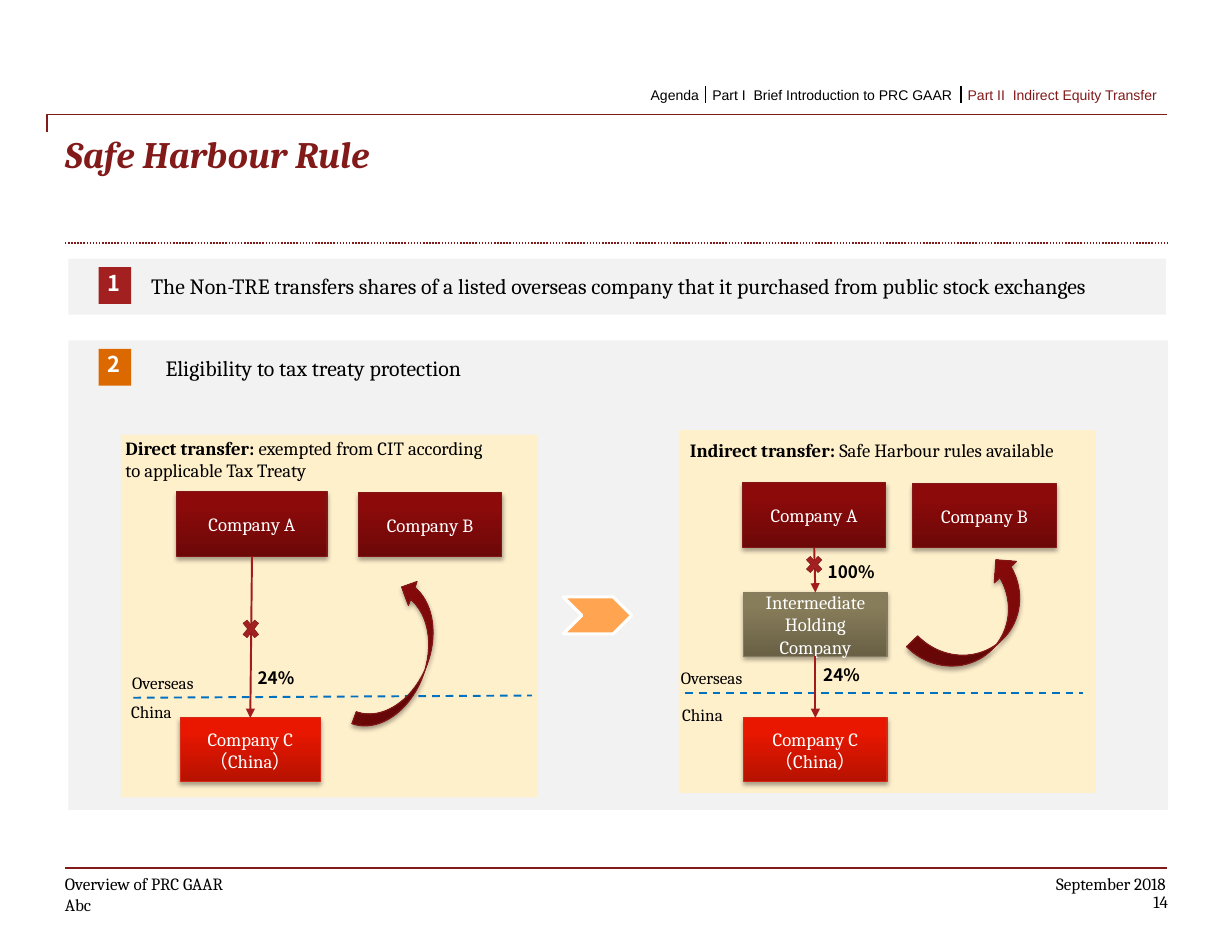
from lxml.etree import SubElement
from pptx import Presentation
from pptx.dml.color import RGBColor
from pptx.enum.dml import MSO_LINE
from pptx.enum.shapes import MSO_CONNECTOR, MSO_SHAPE
from pptx.enum.text import MSO_ANCHOR, MSO_AUTO_SIZE, PP_ALIGN
from pptx.oxml.ns import qn
from pptx.util import Inches, Pt

COLUMNS, ROWS = 110, 85
CELL = Inches(0.1)
COLORS = {
    "black": "000000", "white": "FFFFFF", "maroon": "821A1A", "panel": "F2F2F2",
    "cream": "FFF0CC", "red": "A32020", "orange": "DC6900", "peach": "FFA451",
    "blue": "0070C0", "arrow": "A31C1C", "cross": "791818",
}
GRADIENTS = {
    "owner": ("6D0808", "8D0A0A", "821717"),
    "holding": ("696045", "887D5A", "857C5F"),
    "target": ("B51200", "EA1700", "D62917"),
}
FORMATS = {
    "title": {"name": "Cambria", "size": Pt(24), "bold": True, "italic": True},
    "heading": {"name": "Cambria", "size": Pt(14)},
    "lead": {"name": "Cambria", "size": Pt(12), "bold": True},
    "body": {"name": "Cambria", "size": Pt(12)},
    "small": {"name": "Cambria", "size": Pt(11)},
    "badge": {"name": "Noto Sans CJK SC", "size": Pt(14), "bold": True},
    "share": {"name": "Noto Sans CJK SC", "size": Pt(11), "bold": True},
    "navigation": {"name": "Arial", "size": Pt(9)},
}


def grid(*cells):
    """Convert grid cells to slide lengths."""
    return [round(cell * CELL) for cell in cells]


def rgb(name):
    """Look up a named colour, or accept a hex string."""
    return RGBColor.from_string(COLORS.get(name, name))


def set_attributes(target, values):
    """Set each attribute in a dict of format values."""
    for name, value in values.items():
        setattr(target, name, value)


def add_run(paragraph, text, style, color):
    """Append a formatted run to a paragraph."""
    run = paragraph.add_run()
    run.text = text
    set_attributes(run.font, FORMATS[style])
    run.font.color.rgb = rgb(color)


def add_text(shapes, box, runs, color="black", inset=(0, 0), wrap=True, **paragraph_format):
    """Add a text box holding one paragraph of (text, style) runs."""
    frame = shapes.add_textbox(*grid(*box)).text_frame
    side, top = grid(*inset)
    set_attributes(frame, {
        "margin_left": side, "margin_right": side, "margin_top": top, "margin_bottom": top,
        "word_wrap": wrap,
        "auto_size": MSO_AUTO_SIZE.NONE if wrap else MSO_AUTO_SIZE.SHAPE_TO_FIT_TEXT,
    })
    paragraph = frame.paragraphs[0]
    set_attributes(paragraph, paragraph_format)
    for text, style in runs:
        add_run(paragraph, text, style, color)


def add_block(shapes, kind, box, fill, line=None, width=1.0):
    """Add a flat preset shape."""
    shape = shapes.add_shape(kind, *grid(*box))
    shape.shadow.inherit = False
    shape.fill.solid()
    shape.fill.fore_color.rgb = rgb(fill)
    if line:
        shape.line.color.rgb = rgb(line)
        shape.line.width = Pt(width)
    else:
        shape.line.fill.background()
    return shape


def add_glossy(shapes, kind, box, gradient, rotation=0):
    """Add a preset shape with a vertical gradient and a soft shadow."""
    bottom, top, line = GRADIENTS[gradient]
    shape = add_block(shapes, kind, box, top, line, 0.75)
    shape.rotation = rotation
    shape.fill.gradient()
    shape.fill.gradient_angle = 90
    for stop, color, position in zip(shape.fill.gradient_stops, (bottom, top), (0, 0.8)):
        stop.color.rgb = rgb(color)
        stop.position = position
    effects = shape._element.spPr.find(qn("a:effectLst"))
    shadow = SubElement(effects, qn("a:outerShdw"), blurRad=str(Pt(3.1)), dist=str(Pt(1.8)),
                        dir="5400000", rotWithShape="0")
    color = SubElement(shadow, qn("a:srgbClr"), val=COLORS["black"])
    SubElement(color, qn("a:alpha"), val="35000")
    return shape


def add_company(shapes, box, gradient, *lines):
    """Add a company box with centred lines of text."""
    shape = add_glossy(shapes, MSO_SHAPE.RECTANGLE, box, gradient)
    frame = shape.text_frame
    set_attributes(frame, {"word_wrap": True, "vertical_anchor": MSO_ANCHOR.MIDDLE})
    for index, line in enumerate(lines):
        paragraph = frame.add_paragraph() if index else frame.paragraphs[0]
        paragraph.alignment = PP_ALIGN.CENTER
        add_run(paragraph, line, "body", "white")
    return shape


def add_line(shapes, ends, color, width, dash=None):
    """Add a straight line between two grid points."""
    line = shapes.add_connector(MSO_CONNECTOR.STRAIGHT, *grid(*ends))
    line.line.color.rgb = rgb(color)
    line.line.width = Pt(width)
    if dash:
        line.line.dash_style = dash
    SubElement(line._element.spPr, qn("a:effectLst"))
    return line


def add_ownership(shapes, parent, child):
    """Join a parent company to its subsidiary with an arrow."""
    line = add_line(shapes, (0, 0, 1, 1), "arrow", 1.25)
    line.begin_connect(parent, 2)
    line.end_connect(child, 0)
    SubElement(line.line._get_or_add_ln(), qn("a:tailEnd"), type="triangle")


def add_item(shapes, number, color, panel, text, text_left):
    """Add a grey panel with a numbered badge and its heading."""
    left, top = panel[:2]
    add_block(shapes, MSO_SHAPE.RECTANGLE, panel, "panel")
    add_text(shapes, (text_left, top + 0.8, 93.5, 3.4), [(text, "heading")], inset=(1, 0.5))
    badge = shapes.add_group_shape().shapes
    add_block(badge, MSO_SHAPE.RECTANGLE, (left + 2.7, top + 0.75, 2.9, 3.3), color)
    add_text(badge, (left + 3.5, top + 0.95, 4.1, 4.7), [(number, "badge")], "white")


def add_scheme(shapes, panel, caption_box, caption, border, labels):
    """Add a transfer panel with its caption and the national border."""
    add_block(shapes, MSO_SHAPE.RECTANGLE, panel, "cream")
    add_line(shapes, border, "blue", 1.25, MSO_LINE.DASH)
    lead, rest = caption
    add_text(shapes, caption_box, [(lead, "lead"), (rest, "body")])
    for text, (left, top) in zip(("Overseas", "China"), labels):
        add_text(shapes, (left, top, 10.7, 2.7), [(text, "small")])


def add_direct_transfer(shapes):
    """Draw the scheme in which Company C is sold directly."""
    add_scheme(shapes, (10.8, 38.8, 37.2, 32.4), (11.2, 39, 33.5, 5),
               ("Direct transfer: ", "exempted from CIT according to applicable Tax Treaty"),
               (11.9, 62.3, 47.5, 62.1), ((11.8, 60), (11.7, 62.6)))
    seller = add_company(shapes, (15.8, 43.9, 13.4, 5.8), "owner", "Company A")
    add_company(shapes, (32, 44, 12.8, 5.7), "owner", "Company B")
    target = add_company(shapes, (16.1, 64.1, 12.5, 5.7), "target", "Company C", "（China）")
    add_ownership(shapes, seller, target)
    add_glossy(shapes, MSO_SHAPE.CURVED_UP_ARROW, (28.9, 56.5, 14.1, 4.5), "owner", 290)
    add_block(shapes, MSO_SHAPE.MATH_MULTIPLY, (21.4, 54.9, 2, 2.5), "red", "cross", 0.25)
    add_text(shapes, (23, 59.6, 5.9, 2.4), [("24%", "share")])


def add_indirect_transfer(shapes):
    """Draw the scheme in which the intermediate holding is sold."""
    add_scheme(shapes, (60.6, 38.4, 37.2, 32.4), (61.6, 39.2, 37.8, 4.3),
               ("Indirect transfer: ", "Safe Harbour rules available"),
               (61.2, 61.9, 96.7, 61.9), ((60.8, 59.6), (60.9, 62.9)))
    seller = add_company(shapes, (66.3, 43.1, 12.8, 5.8), "owner", "Company A")
    add_company(shapes, (81.5, 43.2, 12.8, 5.7), "owner", "Company B")
    holding = add_company(shapes, (66.4, 52.9, 12.8, 5.7), "holding",
                          "Intermediate Holding Company")
    target = add_company(shapes, (66.4, 64.1, 12.8, 5.7), "target", "Company C", "（China）")
    add_ownership(shapes, seller, holding)
    add_ownership(shapes, holding, target)
    add_glossy(shapes, MSO_SHAPE.CURVED_UP_ARROW, (81.1, 52.6, 12.5, 5.5), "owner", 315.8)
    add_block(shapes, MSO_SHAPE.MATH_MULTIPLY, (71.7, 49.3, 2, 2.2), "red", "cross", 0.25)
    for text, left, top in (("100%", 73.9, 50.1), ("24%", 73.5, 59.3)):
        add_text(shapes, (left, top, 5.9, 2.1), [(text, "share")])


def add_frame(shapes):
    """Draw the navigation, the title, the rules and the footer."""
    navigation = shapes.add_group_shape().shapes
    for text, left, width, color in (
            ("Agenda", 57.8, 5, "black"),
            ("Part I  Brief Introduction to PRC GAAR", 63.3, 22.2, "black"),
            ("Part II  Indirect Equity Transfer", 86.1, 18.1, "maroon")):
        add_text(navigation, (left, 7.7, width, 1.5), [(text, "navigation")], color,
                 (0.3, 0), False)
    for left in (63, 85.8):
        add_line(navigation, (left, 7.7, left, 9.2), "black", 1)
    builder = shapes.build_freeform(*grid(4.2, 11.8))
    builder.add_line_segments([grid(4.2, 10.2), grid(104.2, 10.2)], close=False)
    corner = builder.convert_to_shape()
    corner.shadow.inherit = False
    corner.fill.background()
    corner.line.color.rgb = rgb("maroon")
    corner.line.width = Pt(0.75)
    add_text(shapes, (5.8, 11.7, 98.4, 9.2), [("Safe Harbour Rule", "title")], "maroon")
    add_line(shapes, (5.8, 21.7, 104.2, 21.7), "maroon", 1, MSO_LINE.ROUND_DOT)
    add_line(shapes, (5.8, 77.5, 104.2, 77.5), "maroon", 0.75)
    add_text(shapes, (5.8, 78, 31.7, 1.9), [("Overview of PRC GAAR", "small")])
    add_text(shapes, (5.8, 80.3, 6, 1.4), [("Abc", "small")], line_spacing=Pt(10))
    add_text(shapes, (90, 78, 14.1, 1.9), [("September 2018", "small")],
             alignment=PP_ALIGN.RIGHT)
    add_text(shapes, (100.8, 80, 3.5, 1.7), [("14", "small")],
             alignment=PP_ALIGN.RIGHT, line_spacing=Pt(10))


def main():
    """Build the slide and save it."""
    presentation = Presentation()
    presentation.slide_width, presentation.slide_height = grid(COLUMNS, ROWS)
    shapes = presentation.slides.add_slide(presentation.slide_layouts[6]).shapes
    add_frame(shapes)
    add_item(shapes, "1", "red", (6.1, 23.1, 98, 5), "The Non-TRE transfers shares of a listed "
             "overseas company that it purchased from public stock exchanges", 12.5)
    add_item(shapes, "2", "orange", (6.1, 30.4, 98.2, 41.9),
             "Eligibility to tax treaty protection", 13.8)
    add_direct_transfer(shapes)
    add_indirect_transfer(shapes)
    add_block(shapes, MSO_SHAPE.CHEVRON, (50.3, 53.3, 6.1, 3.3), "peach", "white", 2)
    presentation.save("out.pptx")


if __name__ == "__main__":
    main()
